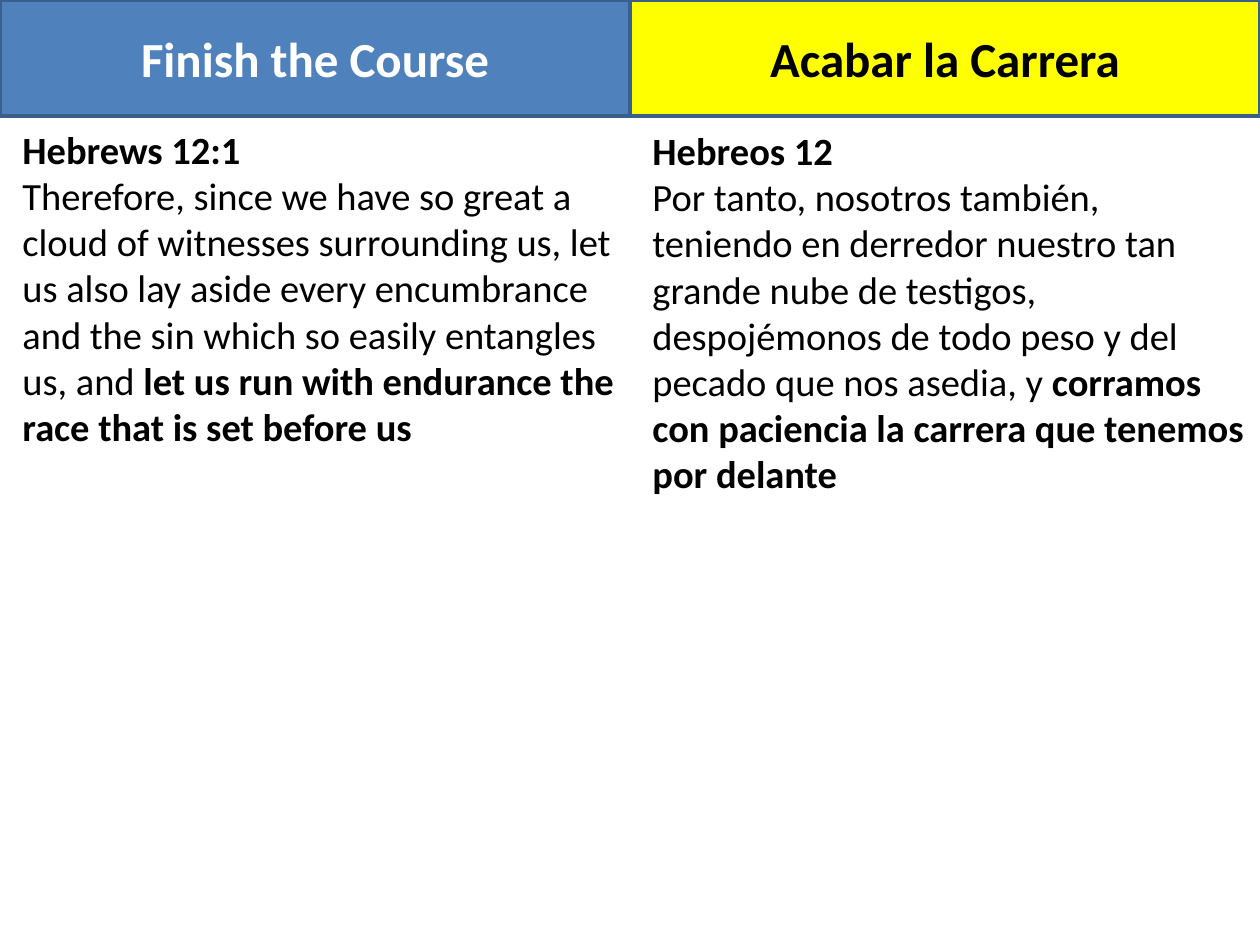
import pptx
import pptx.util
import pptx.dml.color
import pptx.enum.shapes
import pptx.enum.text

Inches, Pt = pptx.util.Inches, pptx.util.Pt

COLORS = {"blue": "4F81BD", "yellow": "FFFF00", "edge": "3A5F8C",
          "white": "FFFFFF", "black": "000000"}
FONT = "Calibri"
WIDTH, HEIGHT = 10, 7.5
HEAD, INSET = 0.92, 0.08

COLUMNS = [
    {"title": "Finish the Course", "fill": "blue", "ink": "white",
     "top": 0.95, "height": 2.69, "verse": "Hebrews 12:1",
     "plain": "Therefore, since we have so great a cloud of witnesses "
              "surrounding us, let us also lay aside every encumbrance and "
              "the sin which so easily entangles us, and ",
     "strong": "let us run with endurance the race that is set before us"},
    {"title": "Acabar la Carrera", "fill": "yellow", "ink": "black",
     "top": 0.96, "height": 3.06, "verse": "Hebreos 12",
     "plain": "Por tanto, nosotros también, teniendo en derredor nuestro tan "
              "grande nube de testigos, despojémonos de todo peso y del "
              "pecado que nos asedia, y ",
     "strong": "corramos con paciencia la carrera que tenemos por delante"},
]


def color(name):
    return pptx.dml.color.RGBColor.from_string(COLORS[name])


def add_run(para, text, size, ink, bold):
    run = para.add_run()
    run.text = text
    run.font.name = FONT
    run.font.size = Pt(size)
    run.font.bold = bold
    run.font.color.rgb = color(ink)


def add_passage(slide, col, left, width):
    box = slide.shapes.add_textbox(Inches(left + INSET), Inches(col["top"]),
                                   Inches(width - INSET), Inches(col["height"]))
    frame = box.text_frame
    frame.word_wrap = True
    frame.auto_size = pptx.enum.text.MSO_AUTO_SIZE.SHAPE_TO_FIT_TEXT
    add_run(frame.paragraphs[0], col["verse"], 22, "black", True)
    body = frame.add_paragraph()
    add_run(body, col["plain"], 22, "black", False)
    add_run(body, col["strong"], 22, "black", True)


def add_header(slide, col, left, width):
    bar = slide.shapes.add_shape(pptx.enum.shapes.MSO_SHAPE.RECTANGLE,
                                 Inches(left), 0, Inches(width), Inches(HEAD))
    bar.shadow.inherit = False
    bar.fill.solid()
    bar.fill.fore_color.rgb = color(col["fill"])
    bar.line.color.rgb = color("edge")
    bar.line.width = Pt(2)
    bar.text_frame.vertical_anchor = pptx.enum.text.MSO_ANCHOR.MIDDLE
    para = bar.text_frame.paragraphs[0]
    para.alignment = pptx.enum.text.PP_ALIGN.CENTER
    add_run(para, col["title"], 28, col["ink"], True)


def main():
    deck = pptx.Presentation()
    deck.slide_width, deck.slide_height = Inches(WIDTH), Inches(HEIGHT)
    slide = deck.slides.add_slide(deck.slide_layouts[6])
    width = WIDTH / len(COLUMNS)
    for add in (add_passage, add_header):
        for i, col in enumerate(COLUMNS):
            add(slide, col, i * width, width)
    deck.save("out.pptx")


if __name__ == "__main__":
    main()
